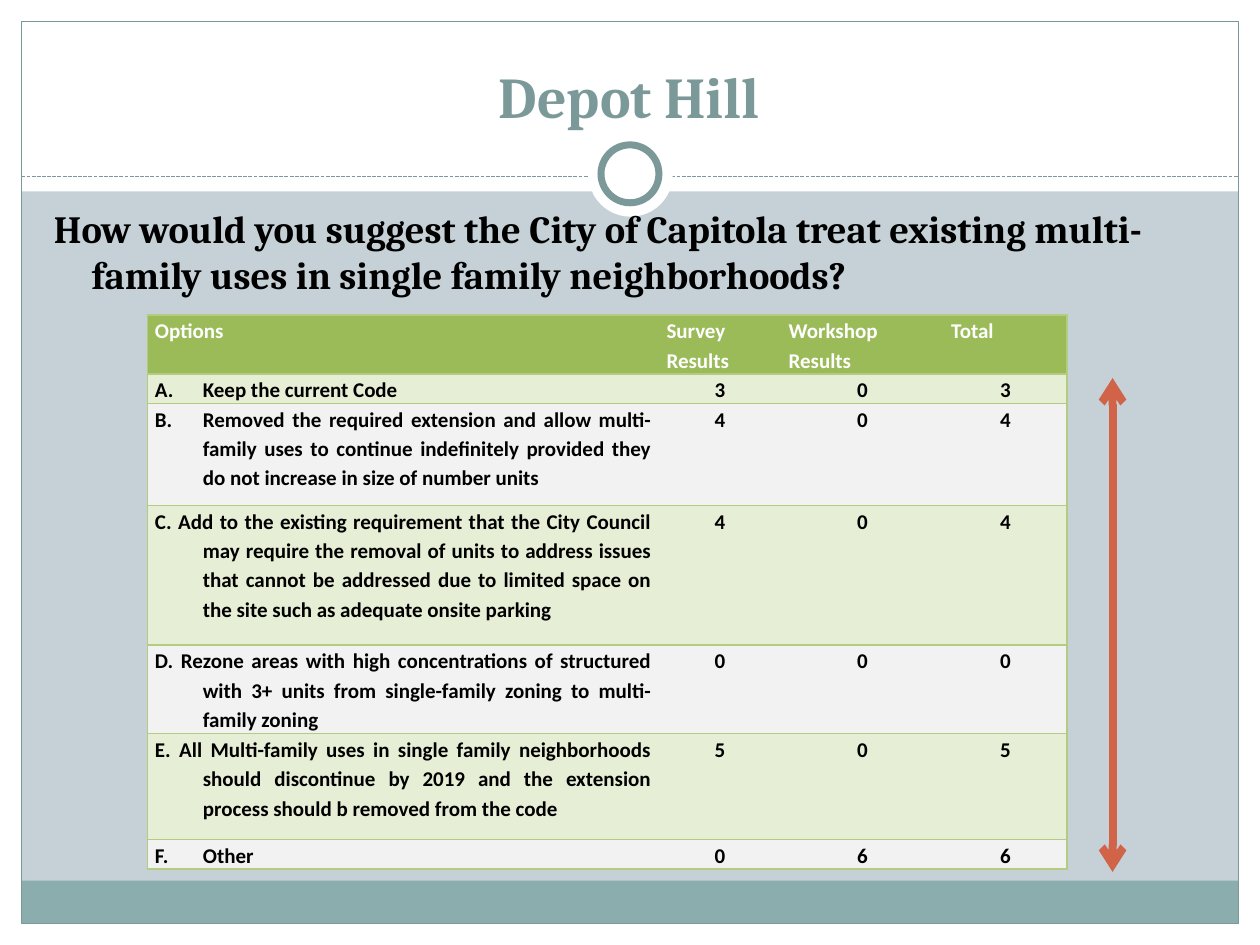
import pptx
import pptx.util
import pptx.dml.color
import pptx.enum.dml
import pptx.enum.shapes
import pptx.enum.text
import pptx.oxml
import pptx.oxml.ns

RGB = pptx.dml.color.RGBColor
Pt = pptx.util.Pt
SHAPE = pptx.enum.shapes.MSO_SHAPE
ALIGN = pptx.enum.text.PP_ALIGN
ANCHOR = pptx.enum.text.MSO_ANCHOR

PX = 9144  # 100 px to the inch
WHITE = RGB(0xFF, 0xFF, 0xFF)
BLACK = RGB(0, 0, 0)
MIST = RGB(0xC5, 0xD1, 0xD7)
TEAL = RGB(0x7C, 0x99, 0x9A)
BAND = RGB(0x8C, 0xAD, 0xAE)
GREEN = RGB(0x9B, 0xBB, 0x59)
PALE = RGB(0xE6, 0xEE, 0xD5)
GREY = RGB(0xF2, 0xF2, 0xF2)
EDGE = RGB(0xB3, 0xCC, 0x82)
RUST = RGB(0xD1, 0x63, 0x49)

HEADS = ["Options", "Survey\nResults", "Workshop\nResults", "Total"]
# Number in the hanging list (None where the letter is typed), text, votes
ROWS = [
    (1, "Keep the current Code", 3, 0, 3),
    (2, "Removed the required extension and allow multi-family uses to continue "
        "indefinitely provided they do not increase in size of number units", 4, 0, 4),
    (None, "C. Add to the existing requirement that the City Council may require the "
           "removal of units to address issues that cannot be addressed due to limited "
           "space on the site such as adequate onsite parking", 4, 0, 4),
    (None, "D. Rezone areas with high concentrations of structured with 3+ units from "
           "single-family zoning to multi-family zoning", 0, 0, 0),
    (None, "E. All Multi-family uses in single family neighborhoods should discontinue "
           "by 2019 and the extension process should b removed from the code", 5, 0, 5),
    (6, "Other", 0, 6, 6),
]
WIDTHS = [406, 97, 129, 98]
HEIGHTS = [44, 22, 81, 111, 66, 84, 22]


def px(*nums):
    return [n * PX for n in nums]


def xml(tag, text=""):
    return pptx.oxml.parse_xml(
        f'<a:{tag} {pptx.oxml.ns.nsdecls("a")} {text}')


def style(para, face, size, color):
    for run in para.runs:
        run.font.name, run.font.size, run.font.bold = face, Pt(size), True
        run.font.color.rgb = color


def hang(para, size):
    props = para._p.get_or_add_pPr()
    props.set("marL", str(size * PX))
    props.set("indent", str(-size * PX))
    return props


def block(slide, kind, box, fill=None, line=None, weight=0.75):
    shape = slide.shapes.add_shape(kind, *px(*box))
    shape.shadow.inherit = False
    if fill is None:
        shape.fill.background()
    else:
        shape.fill.solid()
        shape.fill.fore_color.rgb = fill
    if line is None:
        shape.line.fill.background()
    else:
        shape.line.color.rgb = line
        shape.line.width = Pt(weight)


def stroke(slide, ends, color, weight):
    line = slide.shapes.add_connector(
        pptx.enum.shapes.MSO_CONNECTOR.STRAIGHT, *px(*ends))
    line.line.color.rgb = color
    line.line.width = Pt(weight)
    line._element.spPr.append(xml("effectLst", "/>"))
    return line


def frame(slide, box):
    x, y, w, h = box
    rim, top, foot = 17, 152, 34
    # White margins and the coloured foot
    for part in [(x, y + h - rim, w, rim), (x, y, w, top),
                 (x, y, rim, h), (x + w - rim, y, rim, h)]:
        block(slide, SHAPE.RECTANGLE, part, WHITE)
    inner = w - 2 * rim
    block(slide, SHAPE.RECTANGLE, (x + rim, y + h - rim - foot, inner, foot), BAND)
    block(slide, SHAPE.RECTANGLE, (x + rim, y + rim, inner, h - 2 * rim), line=TEAL)
    # Dashed rule with a ring at its middle
    rule = stroke(slide, (x + rim, y + 140, x + w - rim, y + 140), TEAL, 0.75)
    rule.line.dash_style = pptx.enum.dml.MSO_LINE.SQUARE_DOT
    mid, cy = x + w // 2, y + 138
    block(slide, SHAPE.OVAL, (mid - 33, cy - 33, 67, 67), WHITE)
    block(slide, SHAPE.OVAL, (mid - 23, cy - 23, 46, 46), WHITE, TEAL, 4)


def title(slide, box):
    shape = slide.shapes.title
    shape.left, shape.top, shape.width, shape.height = px(*box)
    text = shape.text_frame
    text.text = "Depot Hill"
    text.vertical_anchor = ANCHOR.BOTTOM
    text.paragraphs[0].alignment = ALIGN.CENTER
    style(text.paragraphs[0], "Cambria", 33, TEAL)
    slide.shapes._spTree.append(shape._element)  # in front of the frame


def query(slide, box):
    text = slide.shapes.add_textbox(*px(*box)).text_frame
    text.word_wrap = True
    text.text = ("How would you suggest the City of Capitola treat existing "
                 "multi- family uses in single family neighborhoods?")
    hang(text.paragraphs[0], 30)
    style(text.paragraphs[0], "Cambria", 22, BLACK)


def border(cell, first, last):
    props = cell._tc.get_or_add_tcPr()
    shown = {"lnL": first, "lnR": last, "lnT": True, "lnB": True}
    for tag, on in shown.items():
        fill = (f'<a:solidFill><a:srgbClr val="{EDGE}"/></a:solidFill>'
                if on else "<a:noFill/>")
        props.append(xml(tag, f'w="12700">{fill}</a:{tag}>'))


def fill_cell(cell, text, fill, color, align, num=None, inset=0):
    cell.margin_left = cell.margin_right = 6 * PX
    cell.margin_top = cell.margin_bottom = 0
    cell.fill.solid()
    cell.fill.fore_color.rgb = fill
    cell.text_frame.text = text
    for para in cell.text_frame.paragraphs:
        para.alignment = align
        para.line_spacing = 1.15
        if inset:
            props = hang(para, inset)
            if num:
                props.append(xml("buAutoNum", f'type="alphaUcPeriod" startAt="{num}"/>'))
        style(para, "Calibri", 12, color)


def votes(slide, box):
    grid = slide.shapes.add_table(len(HEIGHTS), len(WIDTHS), *px(*box)).table
    for col, width in zip(grid.columns, WIDTHS):
        col.width = width * PX
    for row, height in zip(grid.rows, HEIGHTS):
        row.height = height * PX
    for c, head in enumerate(HEADS):
        border(grid.cell(0, c), c == 0, c == 3)
        fill_cell(grid.cell(0, c), head, GREEN, WHITE, ALIGN.JUSTIFY)
    for r, (num, *vals) in enumerate(ROWS, 1):
        fill = PALE if r % 2 else GREY
        for c, val in enumerate(vals):
            cell = grid.cell(r, c)
            border(cell, c == 0, c == 3)
            if c == 0:
                fill_cell(cell, val, fill, BLACK, ALIGN.JUSTIFY, num, 38)
            else:
                fill_cell(cell, str(val), fill, BLACK, ALIGN.CENTER)


def arrow(slide, box):
    x, y, w, h = box
    line = stroke(slide, (x, y, x + w, y + h), RUST, 4.5)
    for tag in ("headEnd", "tailEnd"):
        line.line._get_or_add_ln().append(xml(tag, 'type="arrow"/>'))


def main():
    deck = pptx.Presentation()
    deck.slide_width, deck.slide_height = px(1000, 750)
    slide = deck.slides.add_slide(deck.slide_layouts[5])
    slide.background.fill.solid()
    slide.background.fill.fore_color.rgb = MIST
    frame(slide, (0, 0, 1000, 750))
    title(slide, (33, 25, 933, 83))
    votes(slide, (117, 250, 730, 430))
    query(slide, (33, 158, 967, 100))
    arrow(slide, (883, 300, 0, 392))
    deck.save("out.pptx")


if __name__ == "__main__":
    main()
